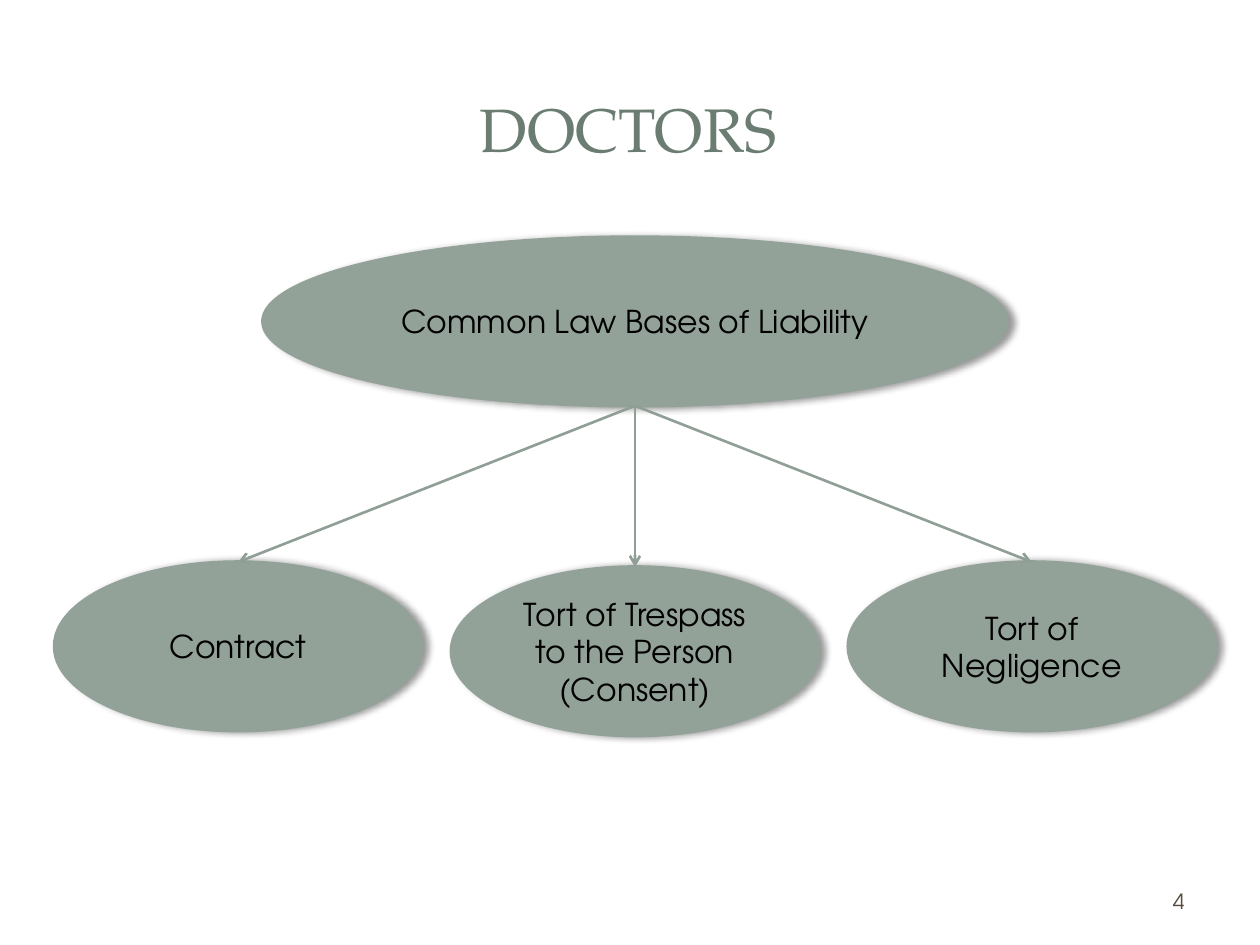
from dataclasses import dataclass

import pptx
import pptx.dml.color
import pptx.enum.shapes
import pptx.enum.text
import pptx.oxml
import pptx.oxml.ns
import pptx.util
from pptx.util import Cm

COLORS = {"title": "6B7D72", "oval": "93A299", "arrow": "8F9F96",
          "text": "000000", "number": "564B3C"}
HEADING_FONT = "TeX Gyre Pagella"
BODY_FONT = "TeX Gyre Adventor"
ALIGN = pptx.enum.text.PP_ALIGN


@dataclass
class Oval:
    lines: list[str]
    left: float
    top: float
    width: float
    height: float = 3.4


ROOT = Oval(["Common Law Bases of Liability"], 5.3, 4.78, 15)
BRANCH_LEFT, BRANCH_STEP, BRANCH_WIDTH = 1.1, 8, 7.4
BRANCHES = [
    (["Contract"], 11.33),
    (["Tort of Trespass to the Person", "(Consent)"], 11.43),
    (["Tort of Negligence"], 11.33),
]


def rgb(name: str) -> pptx.dml.color.RGBColor:
    return pptx.dml.color.RGBColor.from_string(COLORS[name])


def write(shape, lines: list[str], *, size: float, color: str,
          font: str = BODY_FONT, align=ALIGN.CENTER) -> None:
    frame = shape.text_frame
    frame.word_wrap = True
    frame.auto_size = pptx.enum.text.MSO_AUTO_SIZE.NONE
    frame.vertical_anchor = pptx.enum.text.MSO_ANCHOR.MIDDLE
    for index, line in enumerate(lines):
        para = frame.add_paragraph() if index else frame.paragraphs[0]
        para.alignment = align
        span = para.add_run()
        span.text = line
        span.font.name = font
        span.font.size = pptx.util.Pt(size)
        span.font.color.rgb = rgb(color)


def add_effects(shape, content: str = "") -> None:
    """Append an effect list; an empty one removes the theme shadow."""
    namespace = pptx.oxml.ns.nsdecls("a")
    shape._element.spPr.append(pptx.oxml.parse_xml(
        f"<a:effectLst {namespace}>{content}</a:effectLst>"))


def draw_oval(page, oval: Oval):
    shape = page.shapes.add_shape(
        pptx.enum.shapes.MSO_SHAPE.OVAL, Cm(oval.left), Cm(oval.top),
        Cm(oval.width), Cm(oval.height))
    shape.fill.solid()
    shape.fill.fore_color.rgb = rgb("oval")
    shape.line.color.rgb = rgb("oval")
    shape.line.width = pptx.util.Pt(2)
    add_effects(shape, '<a:outerShdw blurRad="50800" dist="38100" dir="0" '
                'rotWithShape="0"><a:srgbClr val="000000">'
                '<a:alpha val="40000"/></a:srgbClr></a:outerShdw>')
    write(shape, oval.lines, size=18, color="text")
    return shape


def draw_arrow(page, source, target) -> None:
    start = source.left + source.width // 2, source.top + source.height
    arrow = page.shapes.add_connector(
        pptx.enum.shapes.MSO_CONNECTOR.STRAIGHT, *start, *start)
    arrow.end_connect(target, 0)
    arrow.line.color.rgb = rgb("arrow")
    arrow.line.width = pptx.util.Pt(1.5)
    arrow.line._get_or_add_ln().append(pptx.oxml.parse_xml(
        f'<a:tailEnd {pptx.oxml.ns.nsdecls("a")} type="arrow"/>'))
    add_effects(arrow)


def main() -> None:
    deck = pptx.Presentation()
    deck.slide_width, deck.slide_height = Cm(25.4), Cm(19.05)
    page = deck.slides.add_slide(deck.slide_layouts[5])

    # Title
    title = page.shapes.title
    title.left, title.top = Cm(1.19), Cm(1.14)
    title.width, title.height = Cm(22.94), Cm(2.9)
    write(title, ["DOCTORS"], size=35, color="title", font=HEADING_FONT)

    # Ovals: one root above three evenly spaced branches
    branches = [
        draw_oval(page, Oval(lines, BRANCH_LEFT + column * BRANCH_STEP, top,
                             BRANCH_WIDTH))
        for column, (lines, top) in enumerate(BRANCHES)]
    root = draw_oval(page, ROOT)

    # Arrows from the root to each branch
    for branch in branches:
        draw_arrow(page, root, branch)

    # Page number
    box = page.shapes.add_textbox(Cm(18.21), Cm(17.65), Cm(5.92), Cm(1.02))
    write(box, ["4"], size=12, color="number", align=ALIGN.RIGHT)

    deck.save("out.pptx")


if __name__ == "__main__":
    main()
